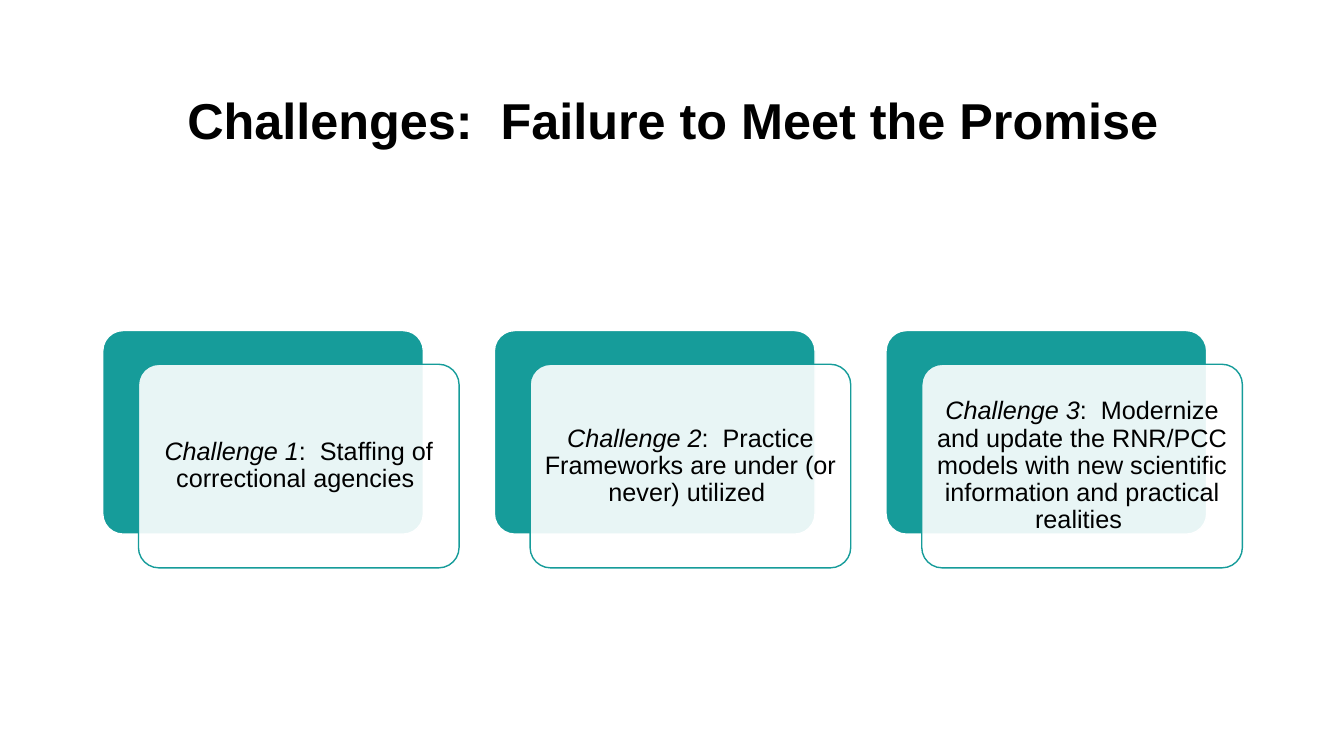
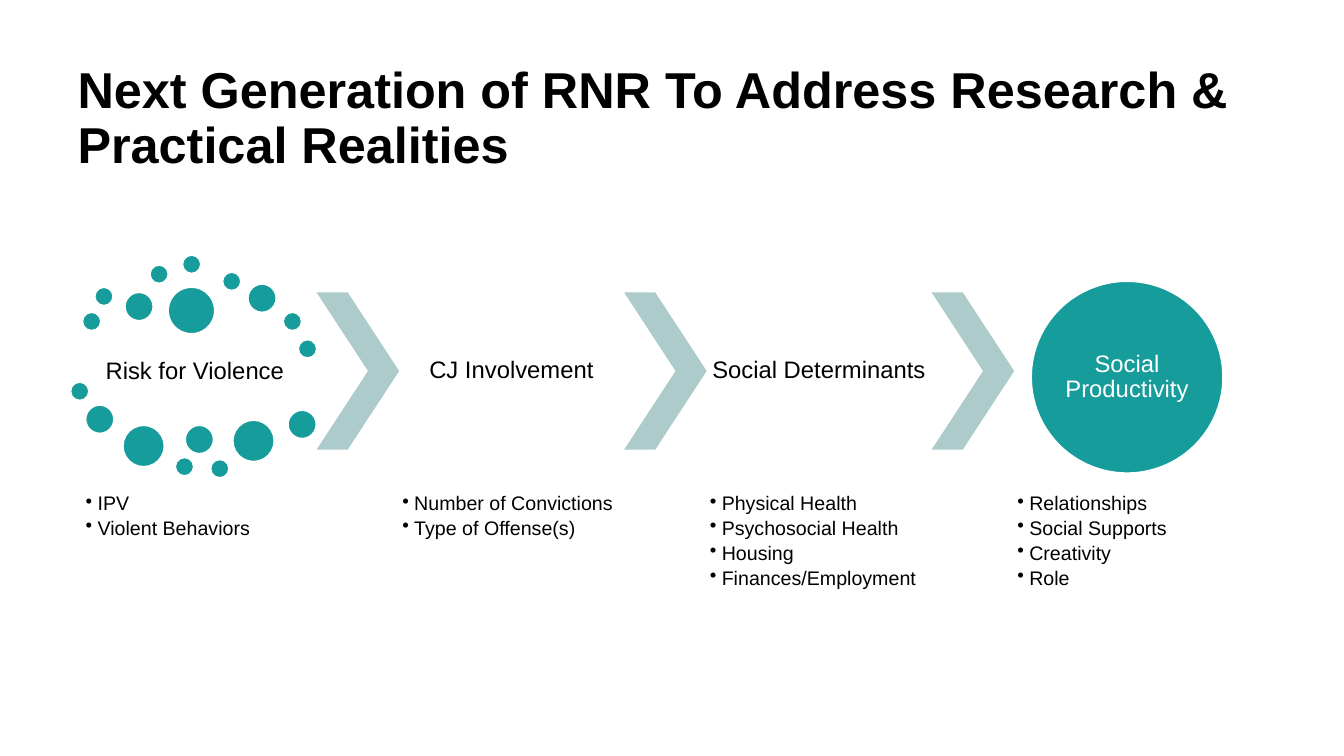
from lxml import etree
from pptx import Presentation
from pptx import util as u
from pptx.dml.color import RGBColor
from pptx.enum import shapes, text
from pptx.oxml import ns

TEAL = RGBColor(0x16, 0x9C, 0x9A)
PALE_TEAL = RGBColor(0xAC, 0xCB, 0xCA)
WHITE = RGBColor(0xFF, 0xFF, 0xFF)
BLACK = RGBColor(0, 0, 0)
CENTER = text.PP_ALIGN.CENTER
LEFT = text.PP_ALIGN.LEFT
TOP = text.MSO_ANCHOR.TOP
MIDDLE = text.MSO_ANCHOR.MIDDLE
SHAPE = shapes.MSO_SHAPE


def cm(*lengths):
    return [u.Cm(length) for length in lengths]


class Deck:
    font = "Arial"
    heading_size = 17
    list_size = 14
    bullet_indent = u.Cm(0.3)

    def __init__(self):
        self.prs = Presentation()
        self.prs.slide_width, self.prs.slide_height = cm(33.87, 19.05)
        self.slide = None

    def add_slide(self, title, box, align=LEFT, anchor=TOP):
        self.slide = self.prs.slides.add_slide(self.prs.slide_layouts[5])
        heading = self.slide.shapes.title
        heading.left, heading.top, heading.width, heading.height = cm(*box)
        frame = self.frame(heading, anchor, None)
        self.add_runs(frame.paragraphs[0], [(title, False)], 36, align=align, bold=True)

    def frame(self, shape, anchor, inset):
        frame = shape.text_frame
        frame.word_wrap = True
        frame.auto_size = text.MSO_AUTO_SIZE.NONE
        frame.vertical_anchor = anchor
        if inset is not None:
            frame.margin_left = frame.margin_right = u.Cm(inset)
            frame.margin_top = frame.margin_bottom = u.Cm(inset)
        return frame

    def add_runs(self, paragraph, runs, size, color=BLACK, align=CENTER, bold=False):
        paragraph.alignment = align
        paragraph.line_spacing = 0.9
        for words, italic in runs:
            run = paragraph.add_run()
            run.text = words
            run.font.name = self.font
            run.font.size = u.Pt(size)
            run.font.bold = bold
            run.font.italic = italic
            run.font.color.rgb = color

    def shape(self, kind, box, fill, line=None, adjust=None, opacity=100):
        shape = self.slide.shapes.add_shape(kind, *cm(*box))
        shape.shadow.inherit = False
        shape.fill.solid()
        shape.fill.fore_color.rgb = fill
        if opacity < 100:
            color = shape._element.spPr.find(ns.qn("a:solidFill"))[0]
            etree.SubElement(color, ns.qn("a:alpha"), val=str(opacity * 1000))
        if line is None:
            shape.line.fill.background()
        else:
            shape.line.color.rgb = line
            shape.line.width = u.Pt(1)
        if adjust is not None:
            shape.adjustments[0] = adjust
        return shape

    def circle(self, left, top, size):
        return self.shape(SHAPE.OVAL, (left, top, size, size), TEAL, WHITE)

    def card(self, left, top, label, message):
        width, height = 8.08, 5.13
        self.shape(SHAPE.ROUNDED_RECTANGLE, (left, top, width, height), TEAL, WHITE, 0.1)
        front = self.shape(SHAPE.ROUNDED_RECTANGLE, (left + 0.9, top + 0.85, width, height),
                           WHITE, TEAL, 0.1, 90)
        frame = self.frame(front, MIDDLE, 0.18)
        self.add_runs(frame.paragraphs[0], [(label, True), (message, False)], 18)

    def label(self, box, words):
        frame = self.frame(self.slide.shapes.add_textbox(*cm(*box)), MIDDLE, 0.05)
        self.add_runs(frame.paragraphs[0], [(words, False)], self.heading_size)

    def bullets(self, box, items):
        frame = self.frame(self.slide.shapes.add_textbox(*cm(*box)), TOP, 0.08)
        for index, item in enumerate(items):
            paragraph = frame.add_paragraph() if index else frame.paragraphs[0]
            paragraph.level = 1
            properties = paragraph._p.get_or_add_pPr()
            properties.set("marL", str(self.bullet_indent))
            properties.set("indent", str(-self.bullet_indent))
            etree.SubElement(properties, ns.qn("a:buChar"), char="•")
            paragraph.space_after = u.Pt(2.5)
            self.add_runs(paragraph, [(item, False)], self.list_size, align=LEFT)


CHALLENGES = [
    "Staffing of correctional agencies ",
    "Practice Frameworks are under (or never) utilized ",
    "Modernize and update the RNR/PCC models with new scientific "
    "information and practical realities ",
]

STAGES = [
    ("Risk for Violence", ["IPV", "Violent Behaviors"]),
    ("CJ Involvement", ["Number of Convictions", "Type of Offense(s)"]),
    ("Social Determinants",
     ["Physical Health", "Psychosocial Health", "Housing", "Finances/Employment"]),
    ("Social Productivity", ["Relationships", "Social Supports", "Creativity", "Role"]),
]

RISK_DOTS = {
    0.46: [(2.08, 7.87), (2.39, 7.24), (3.78, 6.68), (4.6, 6.43), (5.61, 6.86), (7.14, 7.87),
           (7.52, 8.56), (1.78, 9.63), (4.42, 11.53), (5.31, 11.58)],
    0.71: [(3.15, 7.37), (6.25, 7.16), (2.16, 10.21), (4.67, 10.72), (7.26, 10.34)],
    1.04: [(3.1, 10.72), (5.87, 10.59)],
    1.17: [(4.24, 7.24)],
}


def challenges_slide(deck):
    deck.add_slide("Challenges:  Failure to Meet the Promise",
                   (4.24, 1.52, 25.45, 3.15), CENTER, MIDDLE)
    for index, challenge in enumerate(CHALLENGES):
        deck.card(2.59 + 9.87 * index, 8.33, f"Challenge {index + 1}", f":  {challenge}")


def next_generation_slide(deck):
    deck.add_slide("Next Generation of RNR To Address Research & Practical Realities",
                   (1.7, 1.52, 29.59, 3.15))
    for size, places in RISK_DOTS.items():
        for left, top in places:
            deck.circle(left, top, size)

    chevron_width, column_width, row_top, row_height = 2.08, 5.66, 7.37, 3.96
    last = len(STAGES) - 1
    for index, (stage, factors) in enumerate(STAGES):
        left = 2.08
        if index:
            chevron_left = 7.98 + 7.75 * (index - 1)
            deck.shape(SHAPE.CHEVRON, (chevron_left, row_top, chevron_width, row_height),
                       PALE_TEAL, adjust=0.623)
            left = chevron_left + chevron_width
        if index == last:
            goal = deck.circle(left + 0.43, 7.09, 4.83)
            frame = deck.frame(goal, MIDDLE, 0)
            deck.add_runs(frame.paragraphs[0], [(stage, False)], deck.heading_size, WHITE)
        elif index:
            deck.label((left, row_top, column_width, row_height), stage)
        else:
            deck.label((left, 8.43, column_width, 1.88), stage)
        deck.bullets((left, 12.37, column_width, 3.51), factors)


def main():
    deck = Deck()
    challenges_slide(deck)
    next_generation_slide(deck)
    deck.prs.save("out.pptx")


if __name__ == "__main__":
    main()
